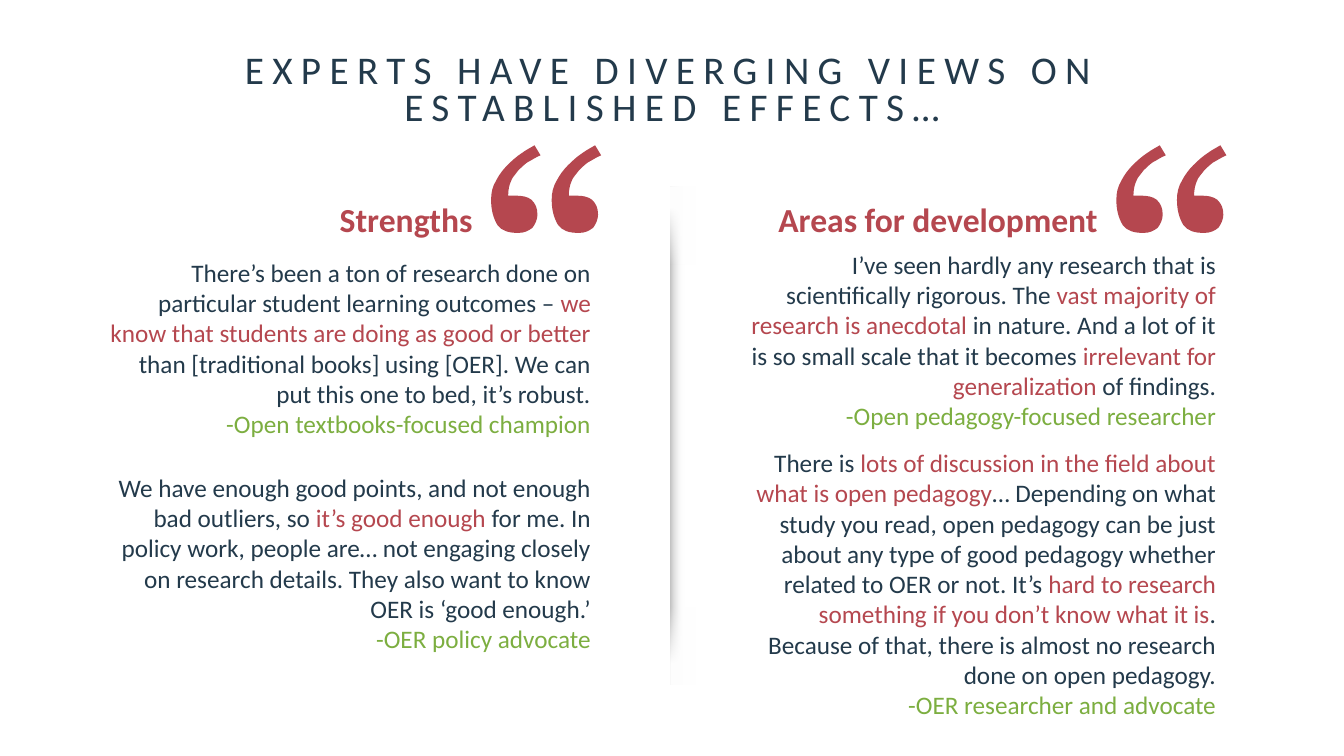
from dataclasses import dataclass

from lxml import etree
from pptx import Presentation
from pptx.dml.color import RGBColor
from pptx.enum.shapes import MSO_SHAPE
from pptx.enum.text import MSO_ANCHOR, MSO_AUTO_SIZE, PP_ALIGN
from pptx.oxml.ns import qn
from pptx.util import Pt

RECTANGLE = MSO_SHAPE.RECTANGLE
TOP, MIDDLE = MSO_ANCHOR.TOP, MSO_ANCHOR.MIDDLE
CENTER, RIGHT = PP_ALIGN.CENTER, PP_ALIGN.RIGHT
NO_FIT, GROW = MSO_AUTO_SIZE.NONE, MSO_AUTO_SIZE.SHAPE_TO_FIT_TEXT


@dataclass(frozen=True)
class Theme:
    font: str = "Calibri"
    ink: str = "233A4B"
    accent: str = "B5474F"
    speaker: str = "7CAE40"
    shade: str = "C1C1C1"
    white: str = "FFFFFF"
    title_size: int = 28
    heading_size: int = 24
    body_size: int = 18


THEME = Theme()

# Content: each quote alternates plain and highlighted wording
TITLE = "EXPERTS HAVE DIVERGING VIEWS ON ESTABLISHED EFFECTS…"
COLUMNS = [
    {
        "heading": "Strengths", "heading_width": 190.8,
        "left": 69.1, "top": 178.8, "height": 293, "space_before": 12,
        "quotes": [
            (["There’s been a ton of research done on particular student learning outcomes – ",
              "we know that students are doing as good or better ",
              "than [traditional books] using [OER]. We can put this one to bed, it’s robust."],
             "-Open textbooks-focused champion"),
            (["We have enough good points, and not enough bad outliers, so ",
              "it’s good enough ",
              "for me. In policy work, people are… not engaging closely on research details. "
              "They also want to know OER is ‘good enough.’"],
             "-OER policy advocate"),
        ],
    },
    {
        "heading": "Areas for development", "heading_width": 247,
        "left": 515.7, "top": 181.9, "height": 328.3, "space_before": 0,
        "quotes": [
            (["I’ve seen hardly any research that is scientifically rigorous. The ",
              "vast majority of research is anecdotal ",
              "in nature. And a lot of it is so small scale that it becomes ",
              "irrelevant for generalization ",
              "of findings."],
             "-Open pedagogy-focused researcher"),
            (["There is ",
              "lots of discussion in the field about what is open pedagogy",
              "… Depending on what study you read, open pedagogy can be just about any type of "
              "good pedagogy whether related to OER or not. It’s ",
              "hard to research something if you don’t know what it is",
              ". Because of that, there is almost no research done on open pedagogy."],
             "-OER researcher and advocate"),
        ],
    },
]

# Layout in points
COLUMN_WIDTH = 360
HEADING_TOP, HEADING_HEIGHT, HEADING_END = 138.2, 36, 275.5
MARK_TOP, MARK_OFFSET, MARK_PITCH = 103.8, 281.7, 43.3
DIVIDER_LEFT, DIVIDER_TOP, DIVIDER_WIDTH, DIVIDER_HEIGHT = 478.8, 133.2, 18, 355.7
FADE_HEIGHT = 180

# One quotation mark: a start point, then line (1 point) or curve (3 points) steps
MARK_START = (35.3, 7.2)
MARK_STEPS = [
    [(31.7, 8.6), (28.8, 10.8), (25.9, 12.2)],
    [(23.8, 13.7), (21.6, 15.8), (19.4, 18)],
    [(17.3, 20.9), (15.1, 23), (14.4, 25.2)],
    [(13, 28.1), (12.2, 31.7), (12.2, 36)],
    [(17.3, 36)],
    [(22.3, 36), (25.9, 36.7), (28.8, 38.9)],
    [(31.7, 41.8), (33.1, 44.6), (33.1, 49.7)],
    [(33.1, 52.6), (31.7, 56.2), (29.5, 59)],
    [(26.6, 61.2), (23.8, 62.6), (19.4, 62.6)],
    [(12.6, 62.6), (7.6, 61.2), (4.5, 56.9)],
    [(1.5, 51.8), (0, 46.1), (0, 38.9)],
    [(0, 33.8), (1, 29.5), (3.6, 25.2)],
    [(5.8, 20.9), (8.6, 17.3), (11.5, 14.4)],
    [(15.1, 10.8), (18.4, 7.9), (21.6, 5.8)],
    [(25.6, 2.9), (28.8, 1.4), (31, 0)],
]


def add_span(para, text, size, color, bold=False):
    span = para.add_run()
    span.text = text
    span.font.name = THEME.font
    span.font.size = Pt(size)
    span.font.bold = bold
    span.font.color.rgb = RGBColor.from_string(color)
    return span


def add_text_box(page, left, top, width, height):
    box = page.shapes.add_textbox(Pt(left), Pt(top), Pt(width), Pt(height))
    frame = box.text_frame
    frame.word_wrap = True
    frame.auto_size = GROW
    frame.vertical_anchor = MIDDLE
    return frame


def add_fade(page, top, height, color, stops, angle, rotation=0):
    """Add a strip whose gradient ends in transparent white."""
    strip = page.shapes.add_shape(
        RECTANGLE, Pt(DIVIDER_LEFT), Pt(top), Pt(DIVIDER_WIDTH), Pt(height))
    strip.shadow.inherit = False
    strip.line.fill.background()
    strip.rotation = rotation
    strip.fill.gradient()
    strip.fill.gradient_angle = angle
    for stop, position, tone in zip(strip.fill.gradient_stops, stops, (color, THEME.white)):
        stop.position = position
        stop.color.rgb = RGBColor.from_string(tone)
    clear = strip._element.xpath(".//a:gs/a:srgbClr")[-1]
    etree.SubElement(clear, qn("a:alpha")).set("val", "0")


def bend_curves(marks, steps):
    """Turn each group of three segments into one Bézier curve."""
    segments = iter(marks._element.xpath(".//a:lnTo"))
    for step in steps:
        group = [next(segments) for _ in step]
        if len(group) == 3:
            curve = etree.Element(qn("a:cubicBezTo"))
            group[0].addprevious(curve)
            for segment in group:
                curve.append(segment[0])
                segment.getparent().remove(segment)


def add_quote_marks(page, left):
    outline = [MARK_START] + [point for step in MARK_STEPS for point in step]
    builder = None
    for shift in (0, MARK_PITCH):
        points = [(Pt(left + shift + x), Pt(MARK_TOP + y)) for x, y in outline]
        if builder is None:
            builder = page.shapes.build_freeform(*points[0])
        else:
            builder.move_to(*points[0])
        builder.add_line_segments(points[1:], close=True)
    marks = builder.convert_to_shape()
    bend_curves(marks, MARK_STEPS * 2)
    marks.shadow.inherit = False
    marks.fill.solid()
    marks.fill.fore_color.rgb = RGBColor.from_string(THEME.accent)
    marks.line.fill.background()


def add_column(page, column):
    left = column["left"]
    # Quotes
    frame = add_text_box(page, left, column["top"], COLUMN_WIDTH, column["height"])
    for number, (parts, speaker) in enumerate(column["quotes"]):
        para = frame.add_paragraph() if number else frame.paragraphs[0]
        para.alignment = RIGHT
        para.space_before = Pt(column["space_before"] if number else 0)
        para.space_after = Pt(0 if number else 12)
        for index, text in enumerate(parts):
            add_span(para, text, THEME.body_size, THEME.accent if index % 2 else THEME.ink)
        para.add_line_break()
        add_span(para, speaker, THEME.body_size, THEME.speaker)
    # Marks and heading
    add_quote_marks(page, left + MARK_OFFSET)
    width = column["heading_width"]
    frame = add_text_box(page, left + HEADING_END - width, HEADING_TOP, width, HEADING_HEIGHT)
    para = frame.paragraphs[0]
    para.alignment = RIGHT
    add_span(para, column["heading"], THEME.heading_size, THEME.accent, bold=True)


def main():
    deck = Presentation()
    deck.slide_width, deck.slide_height = Pt(960), Pt(540)
    page = deck.slides.add_slide(deck.slide_layouts[5])

    # Title
    title = page.shapes.title
    title.left, title.top, title.width, title.height = Pt(69.1), Pt(38.6), Pt(822.2), Pt(72)
    frame = title.text_frame
    frame.margin_left = frame.margin_top = frame.margin_right = frame.margin_bottom = 0
    frame.word_wrap = True
    frame.auto_size = NO_FIT
    frame.vertical_anchor = TOP
    para = frame.paragraphs[0]
    para.alignment = CENTER
    para.line_spacing = 0.8
    span = add_span(para, TITLE, THEME.title_size, THEME.ink)
    span.font._element.set("spc", "600")

    # Divider shadow, faded out at both ends
    add_fade(page, DIVIDER_TOP, DIVIDER_HEIGHT, THEME.shade, (0, 0.55), 0)
    add_fade(page, DIVIDER_TOP, FADE_HEIGHT, THEME.white, (0.08, 0.31), 270)
    add_fade(page, DIVIDER_TOP + DIVIDER_HEIGHT - FADE_HEIGHT, FADE_HEIGHT,
             THEME.white, (0.08, 0.31), 270, rotation=180)

    for column in COLUMNS:
        add_column(page, column)
    deck.save("out.pptx")


if __name__ == "__main__":
    main()
